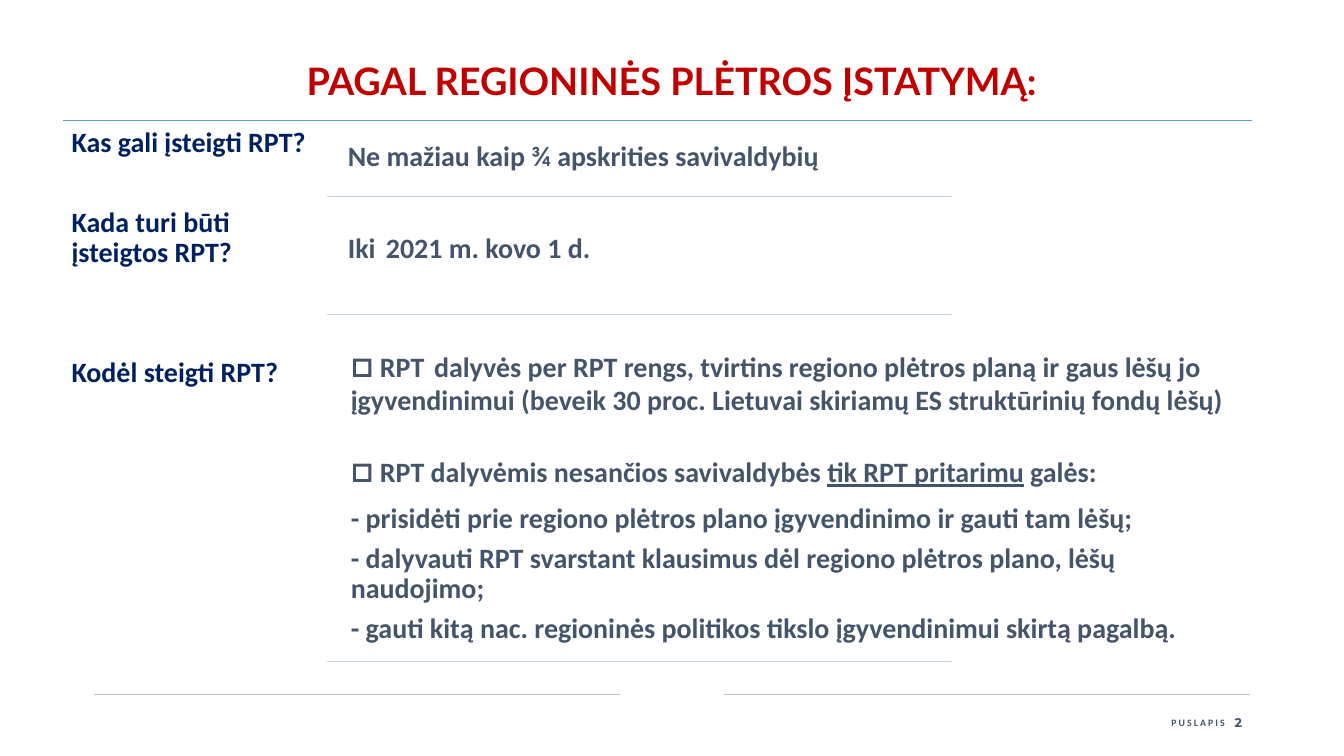
from pptx import Presentation
from pptx.dml.color import RGBColor
from pptx.enum.shapes import MSO_CONNECTOR
from pptx.enum.text import MSO_ANCHOR, PP_ALIGN
from pptx.oxml.ns import qn
from pptx.util import Inches, Pt
from lxml import etree

STRAIGHT = MSO_CONNECTOR.STRAIGHT
LEFT, CENTER, RIGHT = PP_ALIGN.LEFT, PP_ALIGN.CENTER, PP_ALIGN.RIGHT
TOP, MIDDLE = MSO_ANCHOR.TOP, MSO_ANCHOR.MIDDLE

RED = RGBColor(0xC0, 0x00, 0x00)
NAVY = RGBColor(0x00, 0x20, 0x60)
SLATE = RGBColor(0x44, 0x54, 0x6A)
BLUE = RGBColor(0x5B, 0x9B, 0xD5)
PALE_BLUE = RGBColor(0xC4, 0xD5, 0xEB)
GRAY = RGBColor(0xBF, 0xBF, 0xBF)

# The slide is a grid of 100 columns by 100 rows.
WIDTH, HEIGHT = Inches(26.66), Inches(15)

TITLE_BOX = (6.86, 8, 86.23, 6.93)
CONTENT_BOX = (4.69, 15.87, 88.45, 73.6)
FOOTER_BOX = (7.01, 91.87, 85.98, 6)

# Each question: space before it in points, then its words.
QUESTIONS = [
    (0, "Kas gali įsteigti RPT?"),
    (71, "Kada turi būti įsteigtos RPT?"),
    (128, "Kodėl steigti RPT?"),
]

# Each answer: bottom row, width, inset, then paragraphs as (space before, runs).
# A run is (text, size, underlined).
ANSWERS = [
    (10.13, 45.61, 0.17, [
        (0, [("Ne mažiau kaip ¾ apskrities savivaldybių", 40, False)]),
    ]),
    (25.73, 45.61, 0.17, [
        (0, [("Iki", 40, False), (" ", 65, False), ("2021 m. kovo 1 d.", 40, False)]),
    ]),
    (71.67, 67.89, 0.23, [
        (0, [("□", 54, False), (" RPT", 40, False), (" ", 61, False),
             ("dalyvės per RPT rengs, tvirtins regiono plėtros planą ir gaus lėšų jo "
              "įgyvendinimui (beveik 30 proc. Lietuvai skiriamų ES struktūrinių fondų "
              "lėšų)", 40, False)]),
        (48, [("□", 54, False), (" RPT dalyvėmis nesančios savivaldybės ", 40, False),
              ("tik RPT pritarimu", 40, True), (" galės:", 40, False)]),
        (19, [("- prisidėti prie regiono plėtros plano įgyvendinimo ir gauti tam lėšų;",
               40, False)]),
        (14, [("- dalyvauti RPT svarstant klausimus dėl regiono plėtros plano, lėšų "
               "naudojimo;", 40, False)]),
        (14, [("- gauti kitą nac. regioninės politikos tikslo įgyvendinimui skirtą "
               "pagalbą.", 40, False)]),
    ]),
]


def columns(count):
    return round(WIDTH * count / 100)


def rows(count):
    return round(HEIGHT * count / 100)


def add_rule(slide, left, top, width, color, weight):
    """Draw a horizontal line."""
    line = slide.shapes.add_connector(
        STRAIGHT, columns(left), rows(top), columns(left + width), rows(top))
    line.line.color.rgb = color
    line.line.width = Pt(weight)
    etree.SubElement(line._element.spPr, qn("a:effectLst"))


def add_text_frame(slide, box, inset, anchor=TOP, wrap=True):
    left, top, width, height = box
    shape = slide.shapes.add_textbox(
        columns(left), rows(top), columns(width), rows(height))
    frame = shape.text_frame
    frame.word_wrap = wrap
    frame.vertical_anchor = anchor
    frame.margin_left = frame.margin_right = Inches(inset)
    frame.margin_top = frame.margin_bottom = Inches(inset)
    return frame


def add_paragraph(frame, index, runs, color, font="Calibri", align=LEFT,
                  space_before=0, line_spacing=0.9):
    """Fill the first paragraph of the frame, or append a further one."""
    paragraph = frame.add_paragraph() if index else frame.paragraphs[0]
    paragraph.alignment = align
    paragraph.line_spacing = line_spacing
    if space_before:
        paragraph.space_before = Pt(space_before)
    paragraph.font.name = font
    paragraph.font.bold = True
    paragraph.font.color.rgb = color
    sizes = {size for _, size, _ in runs}
    if len(sizes) == 1:
        paragraph.font.size = Pt(runs[0][1])
    for text, size, underlined in runs:
        run = paragraph.add_run()
        run.text = text
        if len(sizes) > 1:
            run.font.size = Pt(size)
        if underlined:
            run.font.underline = True
    return paragraph


def add_title(slide, box):
    frame = add_text_frame(slide, box, 0.05)
    add_paragraph(frame, 0, [("PAGAL REGIONINĖS PLĖTROS ĮSTATYMĄ:", 54, False)],
                  RED, "Lato", CENTER)


def add_questions(slide, box):
    frame = add_text_frame(slide, box, 0.17)
    for index, (space_before, question) in enumerate(QUESTIONS):
        add_paragraph(frame, index, [(question, 40, False)], NAVY,
                      space_before=space_before)


def add_answers(slide, box):
    """Stack the answers, each closed by a rule."""
    left, top, _, _ = box
    indent, gap, rule_width = 0.9, 1.87, 46.51
    previous = 0
    for bottom, width, inset, paragraphs in ANSWERS:
        start = previous + gap
        frame = add_text_frame(
            slide, (left + indent, top + start, width, bottom - start), inset)
        for index, (space_before, runs) in enumerate(paragraphs):
            add_paragraph(frame, index, runs, SLATE, space_before=space_before)
        add_rule(slide, left, top + bottom, rule_width, PALE_BLUE, 1)
        previous = bottom


def add_content(slide, box):
    left, top, width, height = box
    question_width = 19.65
    add_rule(slide, left, top, width, BLUE, 1)
    add_questions(slide, (left, top, question_width, height))
    add_answers(slide, (left + question_width, top, width - question_width, height))


def add_footer(slide, box):
    left, top, width, _ = box
    rule_width = 39.13
    for start in (left, left + width - rule_width):
        add_rule(slide, start, top, rule_width, GRAY, 0.5)

    label = add_text_frame(slide, (left + 79.52, top + 2.86, 4.61, 1.6), 0, MIDDLE, False)
    paragraph = add_paragraph(label, 0, [("PUSLAPIS", 14, False)], SLATE,
                              align=RIGHT, line_spacing=1)
    paragraph.runs[0].font._element.set("spc", "300")

    number = add_text_frame(slide, (left + 83.52, top + 2, 3.2, 3.33), 0.1, TOP, False)
    add_paragraph(number, 0, [("2", 18, False)], SLATE, "Montserrat", CENTER,
                  line_spacing=1)


def main():
    presentation = Presentation()
    presentation.slide_width, presentation.slide_height = WIDTH, HEIGHT
    slide = presentation.slides.add_slide(presentation.slide_layouts[6])
    add_footer(slide, FOOTER_BOX)
    add_content(slide, CONTENT_BOX)
    add_title(slide, TITLE_BOX)
    presentation.save("out.pptx")


if __name__ == "__main__":
    main()
